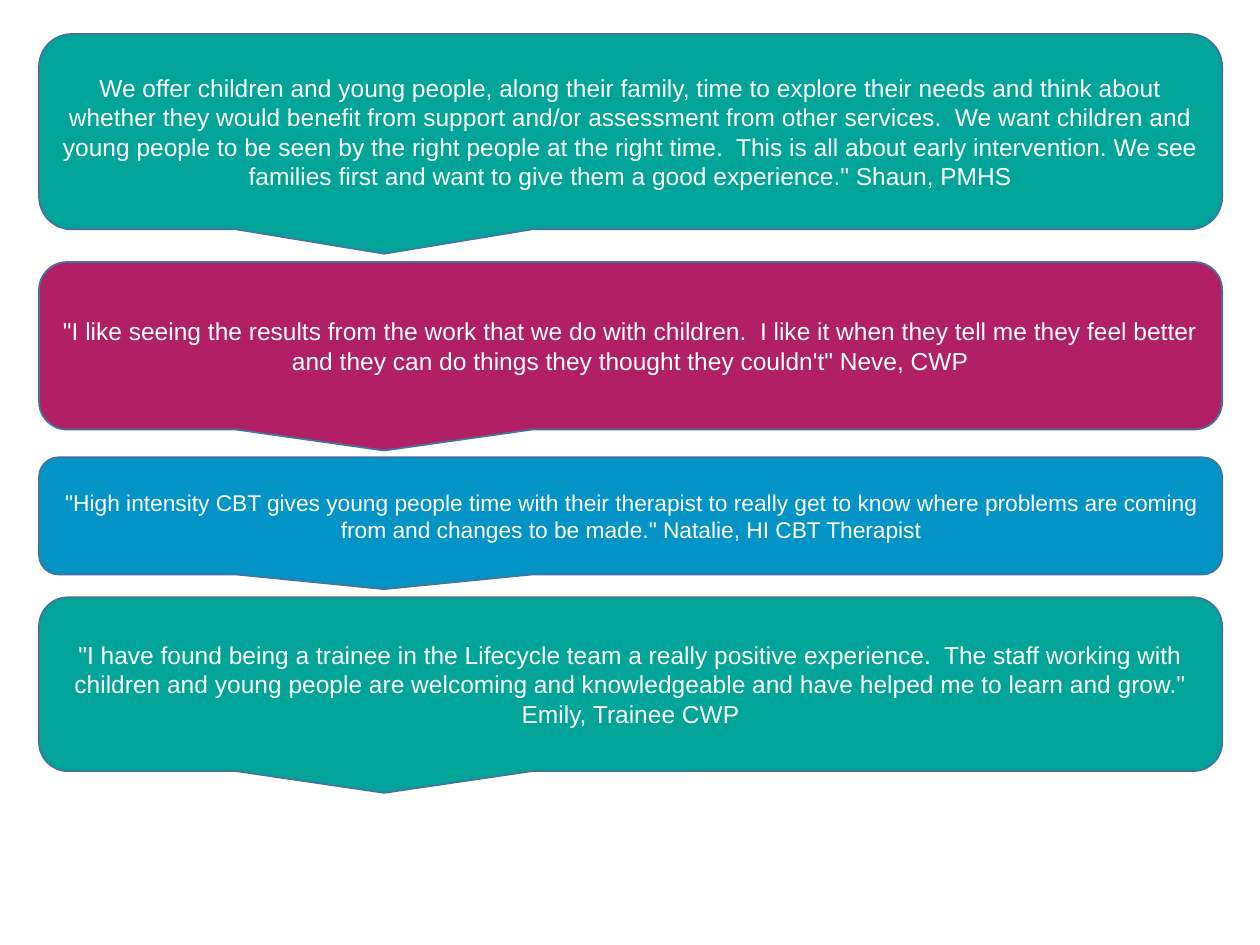
from pptx import Presentation
from pptx.dml.color import RGBColor
from pptx.enum.shapes import MSO_SHAPE
from pptx.enum.text import MSO_ANCHOR, PP_ALIGN
from pptx.util import Inches, Pt

TEAL = RGBColor(0x00, 0xA4, 0x99)
PINK = RGBColor(0xB1, 0x1F, 0x65)
BLUE = RGBColor(0x02, 0x94, 0xC7)
EDGE = RGBColor(0x43, 0x73, 0x9E)
WHITE = RGBColor(0xFF, 0xFF, 0xFF)
FONT = "Arial"
LEFT, WIDTH = 0.31, 9.39

# Quotes: top, height, fill, text size, words
QUOTES = [
    (0.27, 1.55, TEAL, 14,
     "We offer children and young people, along their family, time to explore "
     "their needs and think about whether they would benefit from support "
     "and/or assessment from other services.  We want children and young "
     "people to be seen by the right people at the right time.  This is all "
     "about early intervention. We see families first and want to give them "
     "a good experience.\" Shaun, PMHS"),
    (2.08, 1.33, PINK, 14,
     "\"I like seeing the results from the work that we do with children.  "
     "I like it when they tell me they feel better and they can do things "
     "they thought they couldn't\" Neve, CWP"),
    (3.63, 0.93, BLUE, 13,
     "\"High intensity CBT gives young people time with their therapist to "
     "really get to know where problems are coming from and changes to be "
     "made.\" Natalie, HI CBT Therapist"),
    (4.74, 1.38, TEAL, 14,
     "\"I have found being a trainee in the Lifecycle team a really positive "
     "experience.  The staff working with children and young people are "
     "welcoming and knowledgeable and have helped me to learn and grow.\" "
     "Emily, Trainee CWP"),
]


def add_quote(slide, top, height, fill, size, words):
    # Speech bubble
    bubble = slide.shapes.add_shape(
        MSO_SHAPE.ROUNDED_RECTANGULAR_CALLOUT,
        Inches(LEFT), Inches(top), Inches(WIDTH), Inches(height))
    bubble.shadow.inherit = False
    bubble.fill.solid()
    bubble.fill.fore_color.rgb = fill
    bubble.line.color.rgb = EDGE
    bubble.line.width = Pt(1)

    # Words inside it
    frame = bubble.text_frame
    frame.word_wrap = True
    frame.vertical_anchor = MSO_ANCHOR.MIDDLE
    para = frame.paragraphs[0]
    para.alignment = PP_ALIGN.CENTER
    run = para.add_run()
    run.text = words
    run.font.name = FONT
    run.font.size = Pt(size)
    run.font.color.rgb = WHITE


def main():
    deck = Presentation()
    deck.slide_width, deck.slide_height = Inches(10), Inches(7.5)
    slide = deck.slides.add_slide(deck.slide_layouts[6])
    for quote in QUOTES:
        add_quote(slide, *quote)
    deck.save("out.pptx")


if __name__ == "__main__":
    main()
